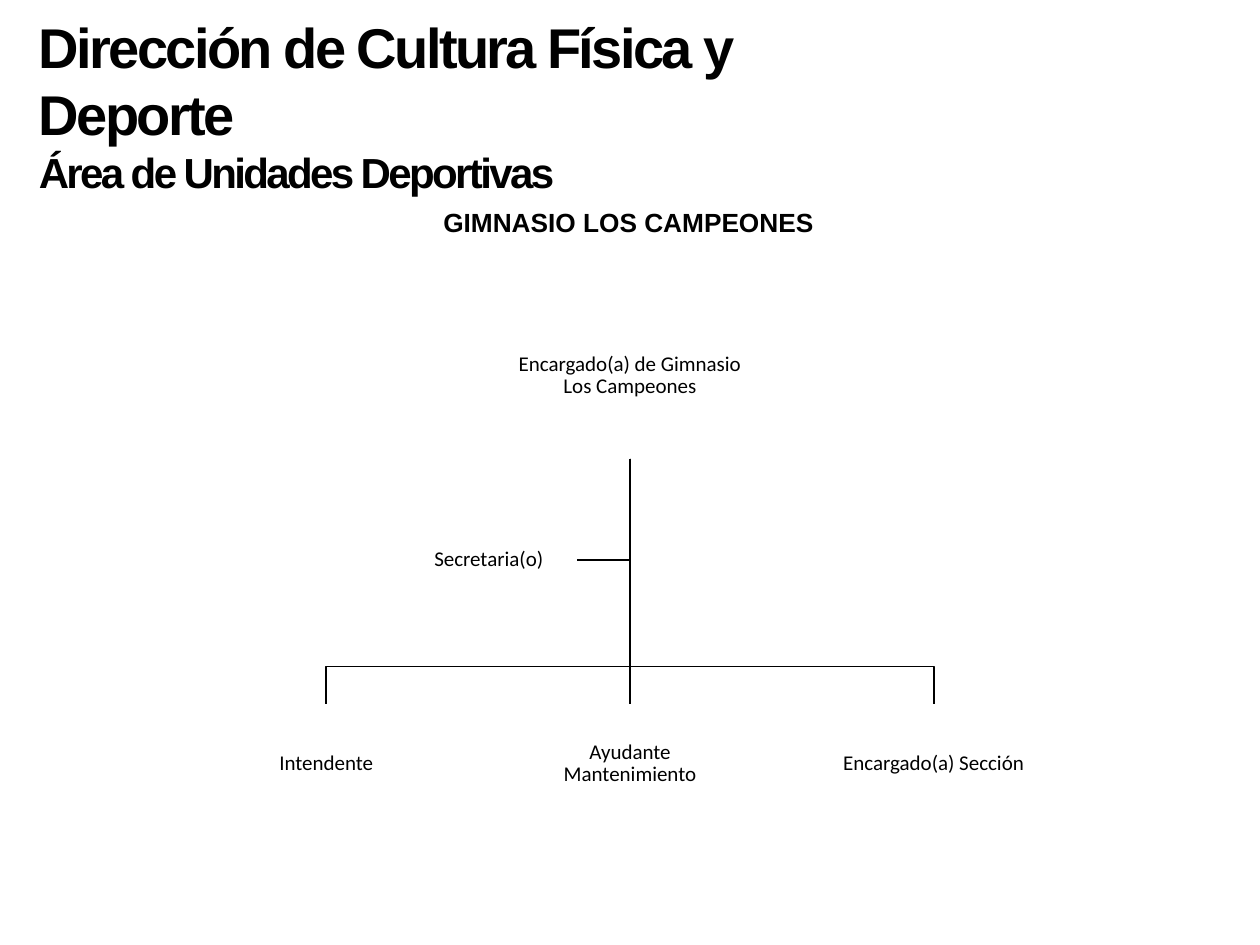
from dataclasses import dataclass

from lxml.etree import SubElement
from pptx import Presentation
from pptx.dml.color import RGBColor
from pptx.enum.shapes import MSO_CONNECTOR, MSO_SHAPE
from pptx.enum.text import MSO_ANCHOR, MSO_AUTO_SIZE, PP_ALIGN
from pptx.oxml.ns import qn
from pptx.util import Inches, Pt


@dataclass(frozen=True)
class Theme:
    """Colours, fonts and type sizes in points."""

    ink: RGBColor = RGBColor(0, 0, 0)
    paper: RGBColor = RGBColor(255, 255, 255)
    heading_font: str = "Arial"
    body_font: str = "Calibri"
    title_size: float = 32
    subtitle_size: float = 24
    unit_size: float = 15
    post_size: float = 12
    line_width: float = 1
    title_spacing: int = -150


@dataclass(frozen=True)
class Box:
    """A box measured in columns and rows of the slide grid."""

    left: float
    top: float
    width: float
    height: float

    @property
    def centre(self):
        """Return the middle column."""
        return self.left + self.width / 2

    @property
    def middle(self):
        """Return the middle row."""
        return self.top + self.height / 2

    @property
    def bottom(self):
        """Return the lowest row."""
        return self.top + self.height

    def place(self):
        """Return left, top, width and height as slide lengths."""
        return [grid(value) for value in (self.left, self.top, self.width, self.height)]


THEME = Theme()
COLUMNS, ROWS = 100, 75
SLIDE_WIDTH, SLIDE_HEIGHT = Inches(10), Inches(7.5)


def grid(units):
    """Turn grid units into a slide length."""
    return round(units * SLIDE_WIDTH / COLUMNS)


def style_runs(paragraph, font_name, size, bold=False):
    """Format every run of a paragraph."""
    for run in paragraph.runs:
        run.font.name = font_name
        run.font.size = Pt(size)
        run.font.bold = bold
        run.font.color.rgb = THEME.ink


def add_post(slide, box, text):
    """Add one post of the chart as a centred white box."""
    shape = slide.shapes.add_shape(MSO_SHAPE.RECTANGLE, *box.place())
    shape.shadow.inherit = False
    shape.fill.solid()
    shape.fill.fore_color.rgb = THEME.paper
    shape.line.fill.background()
    frame = shape.text_frame
    frame.word_wrap = True
    frame.vertical_anchor = MSO_ANCHOR.MIDDLE
    frame.margin_left = frame.margin_right = Inches(0.01)
    frame.margin_top = frame.margin_bottom = Inches(0.01)
    frame.text = text
    paragraph = frame.paragraphs[0]
    paragraph.alignment = PP_ALIGN.CENTER
    paragraph.line_spacing = 0.9
    style_runs(paragraph, THEME.body_font, THEME.post_size)
    return shape


def draw_line(shape):
    """Give a line its colour and width."""
    shape.line.color.rgb = THEME.ink
    shape.line.width = Pt(THEME.line_width)


def add_branch(slide, *points):
    """Add an angled branch through grid points."""
    start, *others = [(grid(column), grid(row)) for column, row in points]
    builder = slide.shapes.build_freeform(*start)
    builder.add_line_segments(others, close=False)
    branch = builder.convert_to_shape()
    branch.shadow.inherit = False
    branch.fill.background()
    draw_line(branch)


def add_trunk(slide, head, post):
    """Join the head to the post straight below it."""
    trunk = slide.shapes.add_connector(MSO_CONNECTOR.STRAIGHT, 0, 0, 0, 0)
    trunk.begin_connect(head, 2)
    trunk.end_connect(post, 0)
    draw_line(trunk)
    SubElement(trunk._element.spPr, qn("a:effectLst"))


def add_heading(slide, box):
    """Add the title and subtitle."""
    frame = slide.shapes.add_textbox(*box.place()).text_frame
    frame.word_wrap = True
    frame.auto_size = MSO_AUTO_SIZE.SHAPE_TO_FIT_TEXT
    frame.text = "Dirección de Cultura Física y Deporte\nÁrea de Unidades Deportivas"
    for paragraph, size in zip(frame.paragraphs, (THEME.title_size, THEME.subtitle_size)):
        style_runs(paragraph, THEME.heading_font, size, bold=True)
        for run in paragraph.runs:
            run.font._element.set("spc", str(THEME.title_spacing))


def add_unit_name(slide, box):
    """Add the name of the unit above the chart."""
    frame = slide.shapes.add_textbox(*box.place()).text_frame
    frame.word_wrap = False
    frame.auto_size = MSO_AUTO_SIZE.SHAPE_TO_FIT_TEXT
    frame.text = "GIMNASIO LOS CAMPEONES"
    style_runs(frame.paragraphs[0], THEME.heading_font, THEME.unit_size, bold=True)


def add_organisation_chart(slide, box):
    """Add the head, the assistant and the row of posts with their lines."""
    head_width, head_height = 24.8, 13.2
    post_width, post_height = 18.2, 9.4
    assistant_width, assistant_height = 14, 7.5
    head = Box(box.centre - head_width / 2, box.top, head_width, head_height)
    assistant = Box(box.left + 15, box.top + 17.5, assistant_width, assistant_height)
    texts = ("Intendente", "Ayudante\vMantenimiento", "Encargado(a) Sección")
    step = (box.width - post_width) / (len(texts) - 1)
    posts = [
        Box(box.left + index * step, box.bottom - post_height, post_width, post_height)
        for index in range(len(texts))
    ]
    head_shape = add_post(slide, head, "Encargado(a) de Gimnasio\vLos Campeones")
    add_post(slide, assistant, "Secretaria(o)")
    post_shapes = [add_post(slide, post, text) for post, text in zip(posts, texts)]
    start = (head.centre, head.bottom)
    add_branch(
        slide,
        start,
        (head.centre, assistant.middle),
        (assistant.left + assistant.width, assistant.middle),
    )
    bar = posts[0].top - 3
    for post in (posts[0], posts[-1]):
        add_branch(slide, start, (head.centre, bar), (post.centre, bar), (post.centre, post.top))
    add_trunk(slide, head_shape, post_shapes[1])


def main():
    """Build and save the presentation."""
    presentation = Presentation()
    presentation.slide_width, presentation.slide_height = SLIDE_WIDTH, SLIDE_HEIGHT
    slide = presentation.slides.add_slide(presentation.slide_layouts[6])
    slide.background.fill.solid()
    slide.background.fill.fore_color.rgb = THEME.paper
    add_organisation_chart(slide, Box(16.8, 23.2, 66.4, 42.1))
    add_unit_name(slide, Box(34.2, 15.9, 31.7, 3.5))
    add_heading(slide, Box(2.1, 0.5, 73, 15.8))
    presentation.save("out.pptx")


if __name__ == "__main__":
    main()
